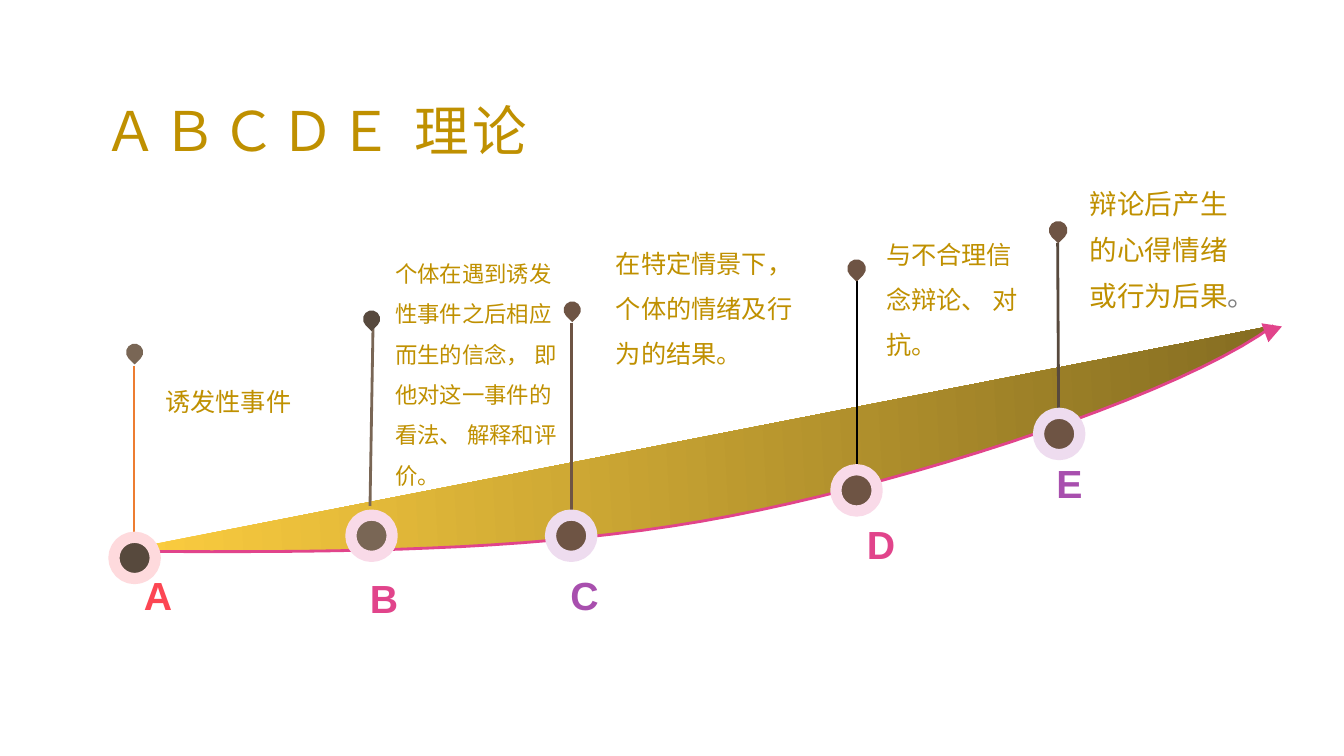
from math import cos, radians, sin

from lxml import etree
from pptx import Presentation
from pptx.dml.color import RGBColor
from pptx.enum.shapes import MSO_CONNECTOR, MSO_SHAPE as SHAPE
from pptx.enum.text import MSO_ANCHOR as ANCHOR, MSO_AUTO_SIZE as AUTO, PP_ALIGN as ALIGN
from pptx.oxml.ns import qn
from pptx.util import Inches, Pt

GOLD, PINK, BROWN = "BF9000", "E1448B", "6E5444"
CJK = "Noto Sans CJK SC"


def rgb(value):
    return RGBColor.from_string(value)


def write(sp, text, size, color, font, spacing=1.0, bold=False):
    """Fill a shape's text frame with one left-aligned paragraph."""
    tf = sp.text_frame
    tf.word_wrap = True
    tf.auto_size = AUTO.NONE
    p = tf.paragraphs[0]
    p.alignment = ALIGN.LEFT
    p.line_spacing = spacing
    p.add_run().text = text
    p.font.size = Pt(size)
    p.font.bold = bold
    p.font.color.rgb = rgb(color)
    p.font.name = font
    ea = etree.SubElement(p.font._element, qn("a:ea"))
    ea.set("typeface", font)
    return p


prs = Presentation()
prs.slide_width, prs.slide_height = Inches(13.33), Inches(7.5)
s = prs.slides.add_slide(prs.slide_layouts[5])

title = s.shapes.title
title.left, title.top = Inches(0.93), Inches(0.89)
title.width, title.height = Inches(5.73), Inches(0.77)
p = write(title, "ＡＢＣＤＥ 理论", 39, GOLD, CJK)
p.font._element.set("spc", "300")
title.text_frame.vertical_anchor = ANCHOR.BOTTOM

# Rising crescent: Bezier curves sampled in the shape's own frame, then tilted
TILT, CX, CY = -3.2, 6.905, 4.43
STEPS = 20
curves = [
    [(1.16, 5.47), (3.24, 5.48), (5.32, 5.49), (7.24, 5.12)],
    [(7.24, 5.12), (9.15, 4.75), (11.73, 3.9), (12.63, 3.23)],
]
c, n = cos(radians(-TILT)), sin(radians(-TILT))
points = []
for curve in curves:
    for i in range(STEPS + 1):
        t = i / STEPS
        weights = ((1 - t) ** 3, 3 * t * (1 - t) ** 2, 3 * t * t * (1 - t), t ** 3)
        dx = sum(w * x for w, (x, y) in zip(weights, curve)) - CX
        dy = sum(w * y for w, (x, y) in zip(weights, curve)) - CY
        points.append((Inches(CX + dx * c - dy * n), Inches(CY + dx * n + dy * c)))
builder = s.shapes.build_freeform(*points[0])
builder.add_line_segments(points[1:], close=False)
crescent = builder.convert_to_shape()
crescent.shadow.inherit = False
crescent.rotation = TILT
crescent.fill.gradient()
crescent.fill.gradient_angle = 0
for stop, position, color in zip(crescent.fill.gradient_stops, (0, 1), ("FECF40", "846C21")):
    stop.position = position
    stop.color.rgb = rgb(color)
crescent.line.color.rgb = rgb(PINK)
crescent.line.width = Pt(2)

arrow = s.shapes.add_shape(SHAPE.ISOSCELES_TRIANGLE, Inches(12.53), Inches(3.18),
                           Inches(0.2), Inches(0.18))
arrow.shadow.inherit = False
arrow.rotation = 69.7
arrow.fill.solid()
arrow.fill.fore_color.rgb = rgb(PINK)
arrow.line.fill.background()

# letter, colour, left, top | stem x1, y1, x2, y2, colour, width
# | dot left, top, fill, ring | pin left, top, fill, outlined
stages = [
    ("A", "FC4653", 1.33, 5.62, (1.33, 3.63, 1.33, 5.29, "ED7D31", 1.5),
     (1.13, 5.33, "57493D", "FEDADD"), (1.25, 3.41, "796655", False)),
    ("B", PINK, 3.57, 5.65, (3.7, 3.22, 3.67, 5.02, "796655", 2),
     (3.48, 5.11, "796655", "F9DAE8"), (3.6, 3.08, "57493D", False)),
    ("C", "A84FAE", 5.56, 5.62, (5.67, 3.2, 5.67, 5.13, BROWN, 2),
     (5.46, 5.11, BROWN, "EEDCEF"), (5.59, 2.99, BROWN, False)),
    ("D", PINK, 8.5, 5.11, (8.5, 2.79, 8.5, 4.89, "000000", 1.5),
     (8.29, 4.66, BROWN, "F9DAE8"), (8.41, 2.58, BROWN, True)),
    ("E", "A84FAE", 10.38, 4.51, (10.49, 2.41, 10.5, 4.18, "57493D", 2),
     (10.3, 4.1, BROWN, "EEDCEF"), (10.41, 2.2, BROWN, True)),
]
for letter, color, left, top, stem, dot, pin in stages:
    line = s.shapes.add_connector(MSO_CONNECTOR.STRAIGHT, *map(Inches, stem[:4]))
    line.line.color.rgb = rgb(stem[4])
    line.line.width = Pt(stem[5])
    etree.SubElement(line._element.spPr, qn("a:effectLst"))

    sp = s.shapes.add_shape(SHAPE.OVAL, Inches(dot[0]), Inches(dot[1]), Inches(0.41), Inches(0.41))
    sp.shadow.inherit = False
    sp.fill.solid()
    sp.fill.fore_color.rgb = rgb(dot[2])
    sp.line.color.rgb = rgb(dot[3])
    sp.line.width = Pt(8)

    sp = s.shapes.add_shape(SHAPE.TEAR, Inches(pin[0]), Inches(pin[1]), Inches(0.17), Inches(0.17))
    sp.shadow.inherit = False
    sp.rotation = 135
    sp.fill.solid()
    sp.fill.fore_color.rgb = rgb(pin[2])
    if pin[3]:
        sp.line.color.rgb = rgb(pin[2])
        sp.line.width = Pt(1)
    else:
        sp.line.fill.background()

    sp = s.shapes.add_textbox(Inches(left), Inches(top), Inches(1.1), Inches(0.58))
    write(sp, letter, 28, color, "Arial", bold=True)

# left, top, width, height, size, line spacing, text
notes = [
    (1.54, 3.63, 1.85, 0.88, 18, 1.5, "诱发性事件"),
    (3.82, 2.4, 1.85, 2.67, 16, 1.5,
     "个体在遇到诱发性事件之后相应而生的信念， 即他对这一事件的看法、 解释和评价。"),
    (6.01, 2.26, 2.01, 0.88, 18, 1.5, "在特定情景下， 个体的情绪及行为的结果。"),
    (8.69, 2.17, 1.68, 1.22, 18, 1.5, "与不合理信念辩论、 对抗。"),
    (10.71, 1.67, 1.68, 1.55, 19.7, 1.4, "辩论后产生的心得情绪或行为后果"),
]
for *box, size, spacing, text in notes:
    sp = s.shapes.add_textbox(*map(Inches, box))
    p = write(sp, text, size, GOLD, CJK, spacing)
r = p.add_run()
r.text = "。"
r.font.color.rgb = rgb("808080")

prs.save("out.pptx")
